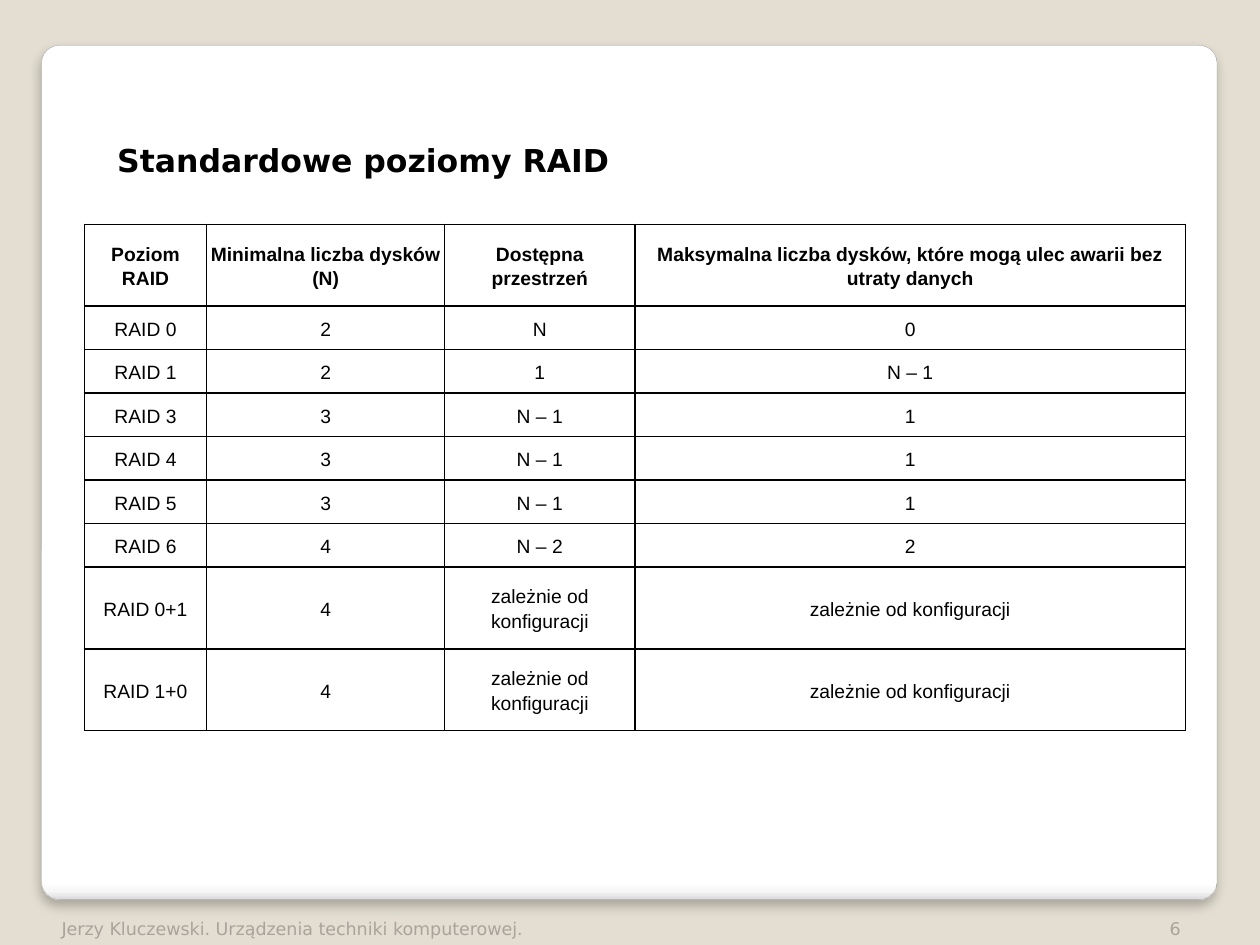
from dataclasses import dataclass

from lxml import etree
from pptx import Presentation
from pptx.dml.color import RGBColor
from pptx.enum.shapes import MSO_SHAPE
from pptx.enum.text import MSO_ANCHOR, MSO_AUTO_SIZE, PP_ALIGN
from pptx.oxml import parse_xml
from pptx.oxml.ns import nsdecls, qn
from pptx.util import Inches, Pt

ROUND_RECT = MSO_SHAPE.ROUNDED_RECTANGLE
TOP, MIDDLE, BOTTOM = MSO_ANCHOR.TOP, MSO_ANCHOR.MIDDLE, MSO_ANCHOR.BOTTOM
LEFT, CENTER, RIGHT = PP_ALIGN.LEFT, PP_ALIGN.CENTER, PP_ALIGN.RIGHT
TITLE_ONLY = 5


@dataclass(frozen=True)
class Theme:
    background: str = "E3DED1"
    card_edge: str = "A4A4A4"
    card_stops: tuple = ((0, "FFFFFF"), (98, "FFFFFF"), (99, "F7F7F7"), (100, "DADADA"))
    ink: str = "000000"
    muted: str = "A8A49B"
    heading_font: str = "DejaVu Sans"
    table_font: str = "Arial"
    title_size: int = 18
    table_size: int = 11
    footer_size: int = 10


THEME = Theme()

LEVELS = [
    ("Poziom RAID", "Minimalna liczba dysków (N)", "Dostępna przestrzeń",
     "Maksymalna liczba dysków, które mogą ulec awarii bez utraty danych"),
    ("RAID 0", "2", "N", "0"),
    ("RAID 1", "2", "1", "N – 1"),
    ("RAID 3", "3", "N – 1", "1"),
    ("RAID 4", "3", "N – 1", "1"),
    ("RAID 5", "3", "N – 1", "1"),
    ("RAID 6", "4", "N – 2", "2"),
    ("RAID 0+1", "4", "zależnie od konfiguracji", "zależnie od konfiguracji"),
    ("RAID 1+0", "4", "zależnie od konfiguracji", "zależnie od konfiguracji"),
]
COLUMN_WIDTHS = (0.97, 1.89, 1.51, 4.37)
SINGLE_ROW, DOUBLE_ROW = 0.345, 0.65
ROW_HEIGHTS = [DOUBLE_ROW] + [SINGLE_ROW] * 6 + [DOUBLE_ROW] * 2


def write(frame, words, font, size, color, align=LEFT, bold=False):
    """Put one formatted run in the first paragraph of a text frame."""
    paragraph = frame.paragraphs[0]
    paragraph.alignment = align
    run = paragraph.add_run()
    run.text = words
    run.font.name = font
    run.font.size = Pt(size)
    run.font.bold = bold
    run.font.color.rgb = RGBColor.from_string(color)
    return paragraph


def add_card(slide, box):
    """White rounded panel, behind everything else."""
    card = slide.shapes.add_shape(ROUND_RECT, *map(Inches, box))
    card.adjustments[0] = 0.021
    card.line.color.rgb = RGBColor.from_string(THEME.card_edge)
    card.line.width = Pt(0.16)
    stops = "".join(
        f'<a:gs pos="{position * 1000}"><a:srgbClr val="{color}"/></a:gs>'
        for position, color in THEME.card_stops)
    properties = card._element.spPr
    properties.find(qn("a:prstGeom")).addnext(parse_xml(
        f'<a:gradFill {nsdecls("a")} rotWithShape="1"><a:gsLst>{stops}</a:gsLst>'
        '<a:lin ang="5400000" scaled="0"/></a:gradFill>'))
    properties.append(parse_xml(
        f'<a:effectLst {nsdecls("a")}><a:outerShdw blurRad="{Pt(6)}" dist="{Pt(4)}" '
        f'dir="5400000" algn="tl" rotWithShape="0"><a:srgbClr val="{THEME.ink}">'
        '<a:alpha val="25000"/></a:srgbClr></a:outerShdw></a:effectLst>'))
    slide.shapes.title._element.addprevious(card._element)


def place_title(slide, box, words):
    title = slide.shapes.title
    title.left, title.top, title.width, title.height = map(Inches, box)
    frame = title.text_frame
    frame.word_wrap = False
    frame.auto_size = MSO_AUTO_SIZE.NONE
    frame.vertical_anchor = TOP
    write(frame, words, THEME.heading_font, THEME.title_size, THEME.ink, bold=True)


def add_footer(slide, box, credit, number):
    """Credit at the left and slide number at the right of the box."""
    left, top, width, height = box
    credit_width, number_width = 7.1, 0.8
    parts = (
        (left, credit_width, credit, LEFT),
        (left + width - number_width, number_width, number, RIGHT),
    )
    for part_left, part_width, words, align in parts:
        part = slide.shapes.add_textbox(
            *map(Inches, (part_left, top, part_width, height)))
        frame = part.text_frame
        frame.word_wrap = True
        frame.vertical_anchor = BOTTOM
        write(frame, words, THEME.heading_font, THEME.footer_size, THEME.muted, align)


def border_cell(cell):
    properties = cell._tc.get_or_add_tcPr()
    for side in ("lnL", "lnR", "lnT", "lnB"):
        edge = etree.SubElement(properties, qn(f"a:{side}"), w=str(Pt(1)))
        fill = etree.SubElement(edge, qn("a:solidFill"))
        etree.SubElement(fill, qn("a:srgbClr"), val=THEME.ink)


def add_levels_table(slide, box):
    table = slide.shapes.add_table(
        len(LEVELS), len(COLUMN_WIDTHS), *map(Inches, box)).table
    table.horz_banding = False
    for column, width in zip(table.columns, COLUMN_WIDTHS):
        column.width = Inches(width)
    for row_index, (level, height) in enumerate(zip(LEVELS, ROW_HEIGHTS)):
        table.rows[row_index].height = Inches(height)
        for cell, words in zip(table.rows[row_index].cells, level):
            border_cell(cell)
            cell.fill.background()
            cell.vertical_anchor = MIDDLE
            cell.margin_left = cell.margin_right = Inches(0.01)
            cell.margin_top = cell.margin_bottom = Inches(0.01)
            paragraph = write(cell.text_frame, words, THEME.table_font,
                              THEME.table_size, THEME.ink, CENTER, row_index == 0)
            paragraph.line_spacing = 1.15


def main():
    deck = Presentation()
    deck.slide_width, deck.slide_height = Inches(10), Inches(7.5)
    slide = deck.slides.add_slide(deck.slide_layouts[TITLE_ONLY])
    slide.background.fill.solid()
    slide.background.fill.fore_color.rgb = RGBColor.from_string(THEME.background)

    add_card(slide, (0.33, 0.36, 9.33, 6.78))
    place_title(slide, (0.83, 1.07, 4.19, 0.71), "Standardowe poziomy RAID")
    add_levels_table(slide, (0.67, 1.78, 8.74, 4.02))
    add_footer(slide, (0.39, 7.27, 9.08, 0.23),
               "Jerzy Kluczewski. Urządzenia techniki komputerowej.", "6")
    deck.save("out.pptx")


if __name__ == "__main__":
    main()
